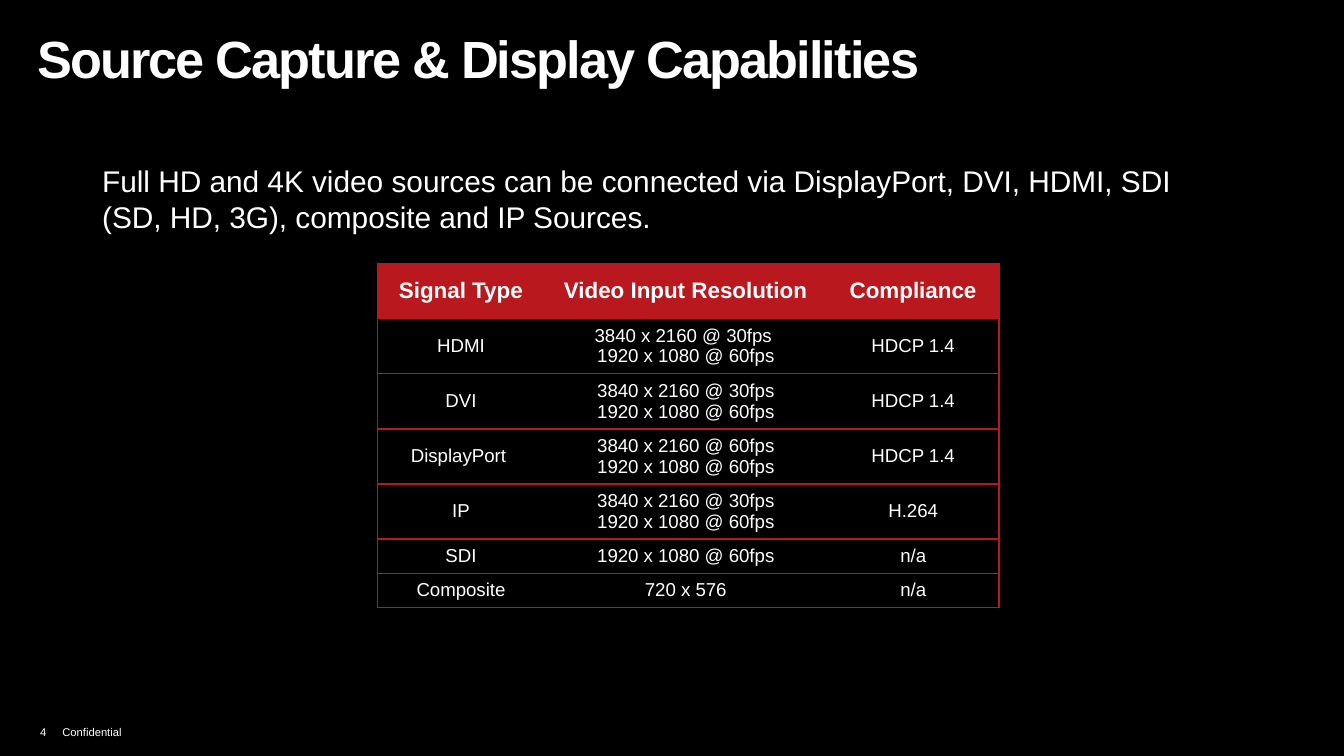
import pptx
import pptx.dml.color
import pptx.enum.text
import pptx.oxml
import pptx.oxml.ns
import pptx.util

WIDTH = pptx.util.Inches(10)
HEIGHT = WIDTH * 9 // 16
BLACK, WHITE, RED = "000000", "FFFFFF", "B9191E"
ANCHOR = pptx.enum.text.MSO_ANCHOR

COLUMN_SHARES = (12.4, 21.05, 12.8)
HEADINGS = ("Signal Type", "Video Input Resolution", "Compliance")
SIGNALS = (
    ("HDMI", ("3840 x 2160 @ 30fps ", "1920 x 1080 @ 60fps"), "HDCP 1.4"),
    ("DVI", ("3840 x 2160 @ 30fps", "1920 x 1080 @ 60fps"), "HDCP 1.4"),
    ("DisplayPort ", ("3840 x 2160 @ 60fps", "1920 x 1080 @ 60fps"), "HDCP 1.4"),
    ("IP", ("3840 x 2160 @ 30fps", "1920 x 1080 @ 60fps"), "H.264"),
    ("SDI", ("1920 x 1080 @ 60fps",), "n/a"),
    ("Composite", ("720 x 576",), "n/a"),
)


def across(percent):
    return round(WIDTH * percent / 100)


def down(percent):
    return round(HEIGHT * percent / 100)


def colour(hex_string):
    return pptx.dml.color.RGBColor.from_string(hex_string)


def add_run(paragraph, words, size, bold=False):
    run = paragraph.add_run()
    run.text = words
    run.font.name = "Arial"
    run.font.size = pptx.util.Pt(size)
    run.font.bold = bold
    run.font.color.rgb = colour(WHITE)


def add_text(slide, area, words, size, bold=False, anchor=ANCHOR.TOP):
    """Place one paragraph in an area given in percent of the slide."""
    left, top, width, height = area
    box = slide.shapes.add_textbox(across(left), down(top), across(width), down(height))
    frame = box.text_frame
    frame.word_wrap = True
    frame.vertical_anchor = anchor
    add_run(frame.paragraphs[0], words, size, bold)
    return frame


def add_title(slide):
    frame = add_text(slide, (1.8, 2.67, 85, 9.07),
                     "Source Capture & Display Capabilities", 28, bold=True)
    frame.paragraphs[0].runs[0].font._element.set("spc", "-100")


def add_summary(slide):
    frame = add_text(slide, (5.9, 20.62, 85.4, 19.02),
                     "Full HD and 4K video sources can be connected via DisplayPort, "
                     "DVI, HDMI, SDI (SD, HD, 3G), composite and IP Sources.", 16)
    frame.margin_left = pptx.util.Inches(0.17)


def add_footer(slide):
    frame = add_text(slide, (2, 94.22, 11.7, 4.44), "4\tConfidential", 6,
                     anchor=ANCHOR.BOTTOM)
    properties = frame.paragraphs[0]._p.get_or_add_pPr()
    properties.append(pptx.oxml.parse_xml(
        f'<a:tabLst {pptx.oxml.ns.nsdecls("a")}>'
        f'<a:tab pos="{pptx.util.Pt(12)}" algn="l"/></a:tabLst>'))


def set_borders(cell, left, right):
    """Rule the cell above and below, and on the outer sides asked for."""
    properties = cell._tc.get_or_add_tcPr()
    sides = (("lnL", left), ("lnR", right), ("lnT", True), ("lnB", True))
    for position, (side, visible) in enumerate(sides):
        paint = (f'<a:solidFill><a:srgbClr val="{RED}"/></a:solidFill>'
                 if visible else "<a:noFill/>")
        properties.insert(position, pptx.oxml.parse_xml(
            f'<a:{side} {pptx.oxml.ns.nsdecls("a")} '
            f'w="{pptx.util.Pt(0.94)}">{paint}</a:{side}>'))


def fill_cell(cell, lines, heading):
    cell.vertical_anchor = ANCHOR.MIDDLE
    cell.margin_top = cell.margin_bottom = pptx.util.Pt(2.6)
    if heading:
        cell.fill.solid()
        cell.fill.fore_color.rgb = colour(RED)
    else:
        cell.fill.background()
    frame = cell.text_frame
    for number, words in enumerate(lines):
        paragraph = frame.add_paragraph() if number else frame.paragraphs[0]
        paragraph.alignment = pptx.enum.text.PP_ALIGN.CENTER
        add_run(paragraph, words, 12 if heading else 10, heading)


def add_signal_table(slide):
    rows = [tuple((heading,) for heading in HEADINGS)]
    rows += [((signal,), modes, (standard,)) for signal, modes, standard in SIGNALS]
    heights = [down(7.3 if not index or len(row[1]) > 1 else 4.53)
               for index, row in enumerate(rows)]
    table = slide.shapes.add_table(
        len(rows), len(HEADINGS), across(28.1), down(34.84),
        across(sum(COLUMN_SHARES)), sum(heights)).table
    for column, share in zip(table.columns, COLUMN_SHARES):
        column.width = across(share)
    last = len(HEADINGS) - 1
    for r, row in enumerate(rows):
        table.rows[r].height = heights[r]
        for c, lines in enumerate(row):
            cell = table.cell(r, c)
            fill_cell(cell, lines, heading=r == 0)
            set_borders(cell, left=c == 0, right=c == last)


def main():
    deck = pptx.Presentation()
    deck.slide_width, deck.slide_height = WIDTH, HEIGHT
    slide = deck.slides.add_slide(deck.slide_layouts[6])
    slide.background.fill.solid()
    slide.background.fill.fore_color.rgb = colour(BLACK)
    add_footer(slide)
    add_summary(slide)
    add_title(slide)
    add_signal_table(slide)
    deck.save("out.pptx")


if __name__ == "__main__":
    main()
